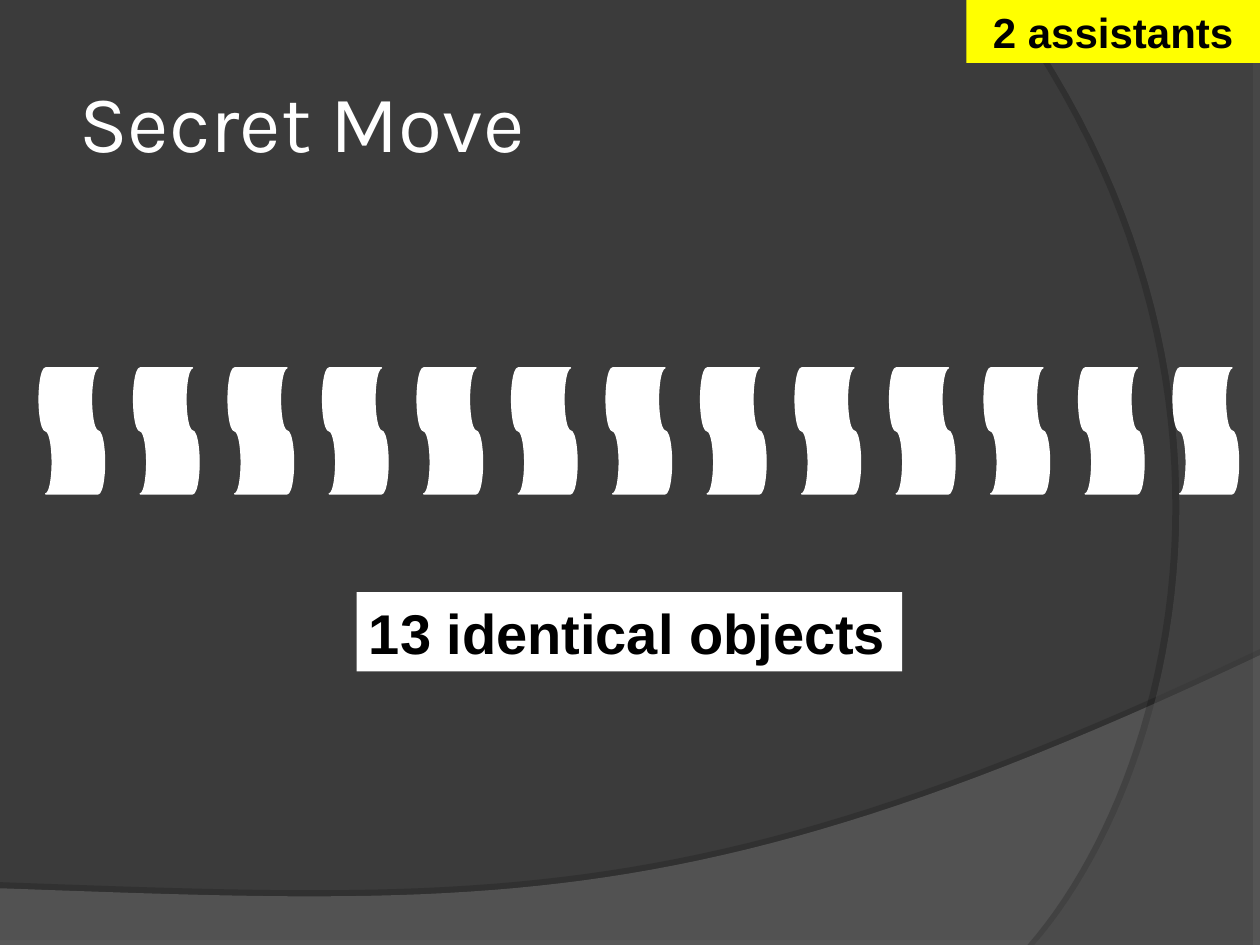
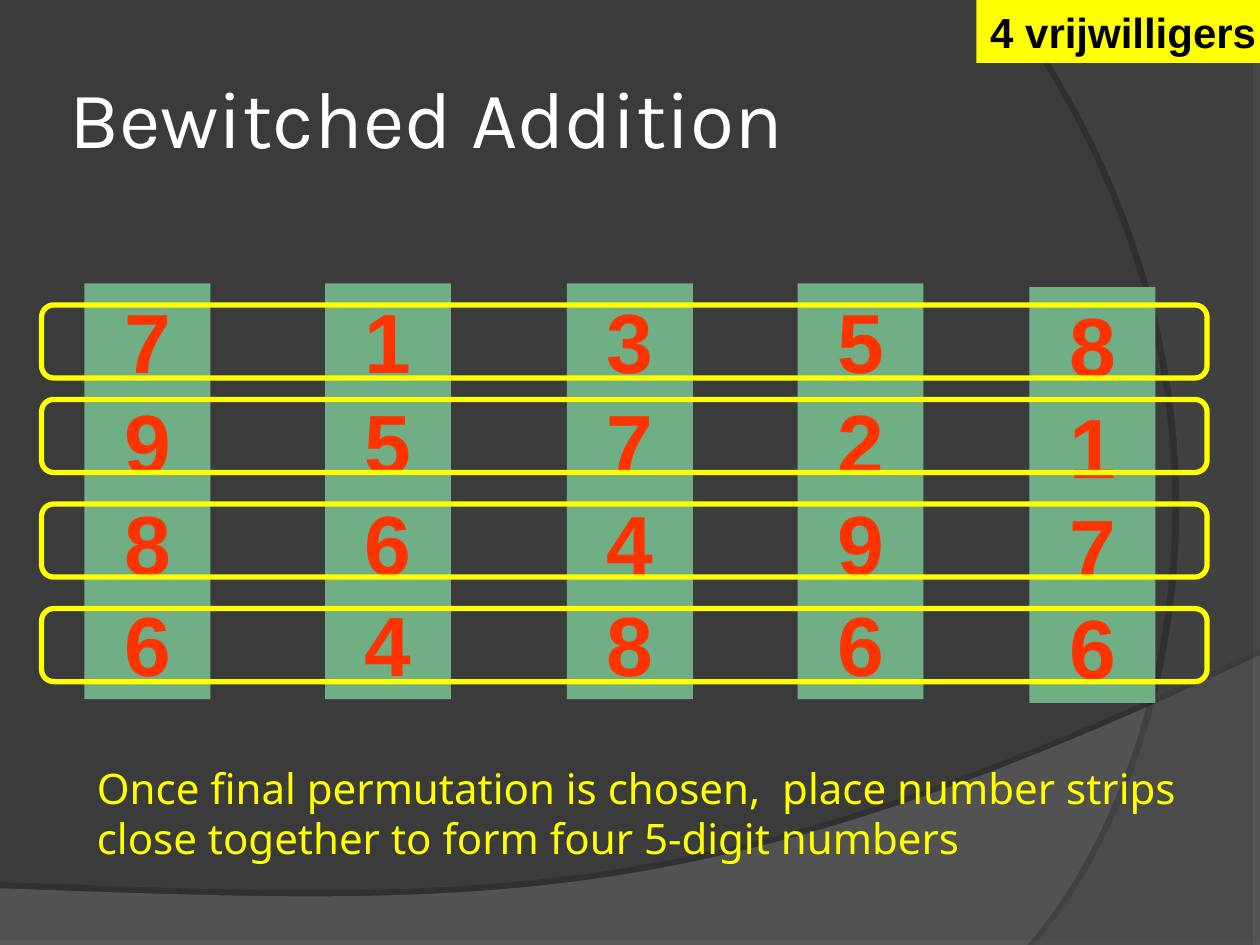
from lxml import etree
from pptx import Presentation
from pptx.dml.color import RGBColor
from pptx.enum.shapes import MSO_SHAPE as Preset
from pptx.enum.text import MSO_ANCHOR as Anchor, MSO_AUTO_SIZE as AutoSize, PP_ALIGN as Align
from pptx.oxml.ns import qn
from pptx.util import Inches, Pt

BACKDROP = RGBColor(0x3B, 0x3B, 0x3B)
HILL = RGBColor(0x7C, 0x7C, 0x7C)
ARC = RGBColor(0x59, 0x59, 0x59)
WHITE = RGBColor(0xFF, 0xFF, 0xFF)
BLACK = RGBColor(0, 0, 0)
YELLOW = RGBColor(0xFF, 0xFF, 0)
GREEN = RGBColor(0x70, 0xAE, 0x85)
ORANGE = RGBColor(0xFF, 0x33, 0)

SECRET = {
    "title": "Secret Move", "title_at": (0.58, 0.33),
    "helpers": "2 assistants", "helpers_left": 7.67,
    "caption": "13 identical objects", "objects": 13,
}
ADDITION = {
    "title": "Bewitched Addition", "title_at": (0.5, 0.3),
    "helpers": "4 vrijwilligers", "helpers_left": 7.75,
    "strips": [
        (0.67, 2.25, "7986"),
        (2.58, 2.25, "1564"),
        (4.5, 2.25, "3748"),
        (6.33, 2.25, "5296"),
        (8.17, 2.28, "8176"),
    ],
    "row_tops": [2.42, 3.17, 4, 4.83],
    "hint": "Once final permutation is chosen,  place number strips "
            "close together to form four 5-digit numbers",
}

CURVE_STEPS = 48


def curve(start, pull_a, pull_b, end):
    points = []
    for step in range(1, CURVE_STEPS + 1):
        t = step / CURVE_STEPS
        weights = ((1 - t) ** 3, 3 * t * (1 - t) ** 2, 3 * t * t * (1 - t), t ** 3)
        corners = (start, pull_a, pull_b, end)
        points.append(tuple(sum(w * c[axis] for w, c in zip(weights, corners)) for axis in (0, 1)))
    return points


HILL_EDGE = [(0, 7.05), (0, 7.51), (10, 7.51), (10, 5.2)] + curve(
    (10, 5.2), (5.59, 7.29), (3.91, 7.19), (0, 7.05))
ARC_EDGE = [(10, 0.02), (10, 7.5), (8.21, 7.5)] + curve(
    (8.21, 7.5), (9.35, 6.19), (10.18, 3), (8, 0))
SWEEPS = [
    (HILL_EDGE, HILL, 45, 35, 3.5, 270),
    (ARC_EDGE, ARC, 40, 45, 4, 180),
]


def add_alpha(color_element, percent):
    etree.SubElement(color_element, qn("a:alpha"), val=str(percent * 1000))


def add_sweep(slide, edge, color, opacity, shadow_opacity, distance, direction):
    outline = [(Inches(x), Inches(y)) for x, y in edge]
    builder = slide.shapes.build_freeform(*outline[0])
    builder.add_line_segments(outline[1:], close=True)
    sweep = builder.convert_to_shape()
    sweep.fill.solid()
    sweep.fill.fore_color.rgb = color
    sweep.line.fill.background()
    sweep.shadow.inherit = False
    properties = sweep.element.spPr
    add_alpha(properties.find(qn("a:solidFill")).find(qn("a:srgbClr")), opacity)
    shadow = etree.SubElement(
        properties.find(qn("a:effectLst")), qn("a:outerShdw"), blurRad="0",
        dist=str(Pt(distance)), dir=str(direction * 60000), algn="ctr", rotWithShape="0")
    add_alpha(etree.SubElement(shadow, qn("a:srgbClr"), val=str(BLACK)), shadow_opacity)


def add_block(slide, preset, box, fill=None, line=None, width=0.75):
    block = slide.shapes.add_shape(preset, *map(Inches, box))
    block.shadow.inherit = False
    if fill is None:
        block.fill.background()
    else:
        block.fill.solid()
        block.fill.fore_color.rgb = fill
    if line is None:
        block.line.fill.background()
    else:
        block.line.color.rgb = line
        block.line.width = Pt(width)
    return block


def write(holder, lines, size, face, color, bold=False, align=Align.LEFT, anchor=Anchor.TOP):
    frame = holder.text_frame
    frame.word_wrap = True
    frame.vertical_anchor = anchor
    frame.text = "\n".join(lines)
    for paragraph in frame.paragraphs:
        paragraph.alignment = align
        font = paragraph.font
        font.size, font.name, font.bold = Pt(size), face, bold
        font.color.rgb = color
    return frame


def add_label(slide, text, box, fill, size, align):
    label = add_block(slide, Preset.RECTANGLE, box, fill)
    frame = write(label, [text], size, "Arial", BLACK, True, align)
    frame.auto_size = AutoSize.SHAPE_TO_FIT_TEXT
    paragraph = frame.paragraphs[0]
    paragraph.space_before = Pt(0)
    before = paragraph._p.pPr.find(qn("a:spcBef"))
    before.remove(before[0])
    etree.SubElement(before, qn("a:spcPct"), val="50000")


def start_slide(deck, content):
    slide = deck.slides.add_slide(deck.slide_layouts[6])
    for sweep in SWEEPS:
        add_sweep(slide, *sweep)
    left, top = content["title_at"]
    title = slide.shapes.add_textbox(*map(Inches, (left, top, 8.17, 1.25)))
    frame = write(title, [content["title"]], 46, "Karla", WHITE, anchor=Anchor.MIDDLE)
    frame.margin_left = frame.margin_right = Inches(0.05)
    add_label(slide, content["helpers"], (content["helpers_left"], 0, 2.33, 0.5),
              YELLOW, 24, Align.CENTER)
    return slide


def build_secret(deck):
    slide = start_slide(deck, SECRET)
    for index in range(SECRET["objects"]):
        box = (0.07 + 0.75 * index, 3.16, 1, 0.52)
        add_block(slide, Preset.FLOWCHART_PUNCHED_TAPE, box, WHITE, WHITE).rotation = 90
    add_label(slide, SECRET["caption"], (2.83, 4.7, 4.33, 0.63), WHITE, 32, Align.LEFT)


def build_addition(deck):
    slide = start_slide(deck, ADDITION)
    for left, top, digits in ADDITION["strips"]:
        strip = add_block(slide, Preset.RECTANGLE, (left, top, 1, 3.3), GREEN)
        write(strip, digits, 48, "Arial", ORANGE, True, Align.CENTER, Anchor.MIDDLE)
    hint = slide.shapes.add_textbox(*map(Inches, (0.67, 6, 8.92, 0.91)))
    write(hint, [ADDITION["hint"]], 24, "Noto Sans", YELLOW)
    for top in ADDITION["row_tops"]:
        add_block(slide, Preset.ROUNDED_RECTANGLE, (0.33, top, 9.25, 0.58), line=YELLOW, width=3)


def main():
    deck = Presentation()
    deck.slide_width, deck.slide_height = Inches(10), Inches(7.5)
    backdrop = deck.slide_master.background.fill
    backdrop.solid()
    backdrop.fore_color.rgb = BACKDROP
    build_secret(deck)
    build_addition(deck)
    deck.save("out.pptx")


if __name__ == "__main__":
    main()
